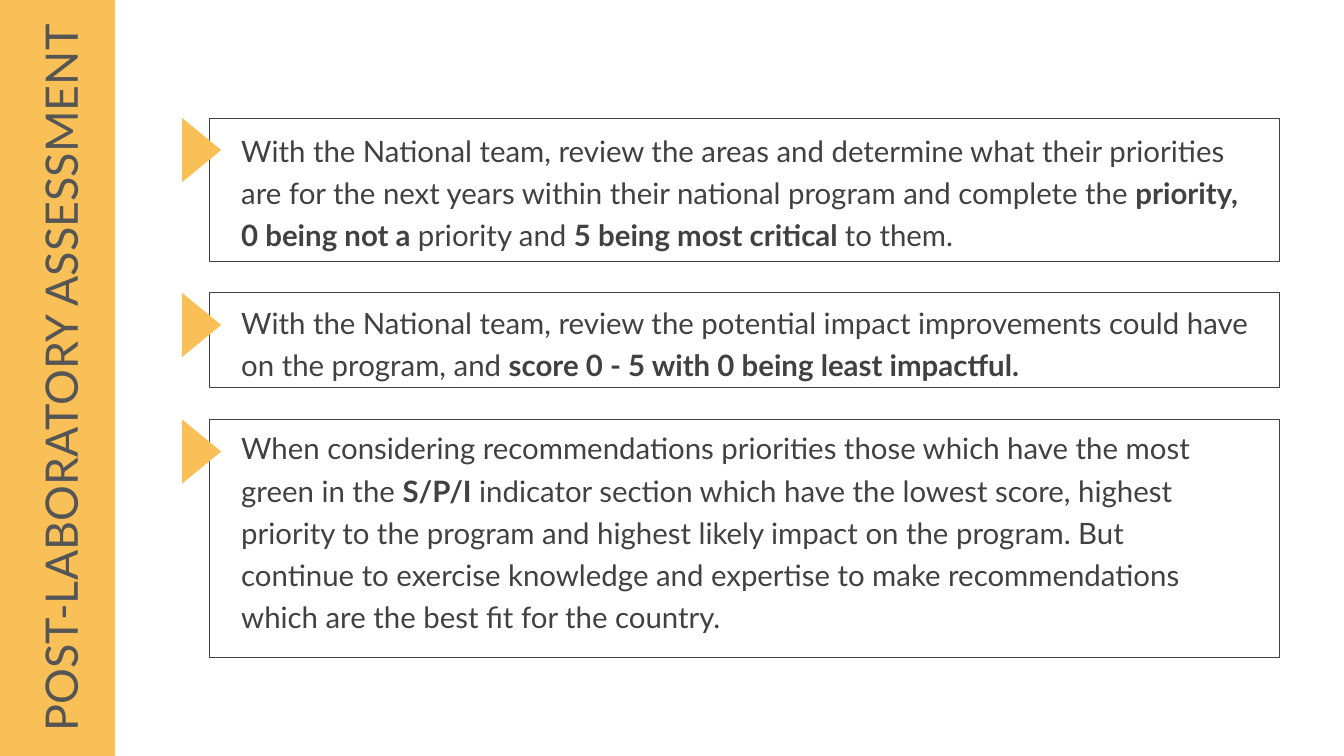
from dataclasses import dataclass

from pptx import Presentation
from pptx import util as u
from pptx.dml import color
from pptx.enum import shapes, text

Pt = u.Pt
RGB = color.RGBColor.from_string


@dataclass(frozen=True)
class Theme:
    font: str = "Lato"
    gold: str = "F8C056"
    ink: str = "414141"
    gray: str = "555555"
    head: float = 32
    body: float = 21


THEME = Theme()
WIDE, HIGH = 960, 540
BAND = 82
LEFT, TOP, WIDTH, GAP = 149.8, 84.2, 764, 22.7

# Each step: height, insets (left, top, right, bottom), anchor, runs (words, bold)
MID, UP = text.MSO_ANCHOR.MIDDLE, text.MSO_ANCHOR.TOP
STEPS = [
    (102.2, (22.5, 5.8, 22.5, 5.8), MID, [
        ("With the National team, review the areas and determine what their "
         "priorities are for the next years within their national program "
         "and complete the ", False),
        ("priority, 0 being not a ", True),
        ("priority and ", False),
        ("5 being most critical ", True),
        ("to them.", False)]),
    (67.7, (22.5, 2.9, 11.5, 2.9), MID, [
        ("With the National team, review the potential impact improvements "
         "could have on the program, and ", False),
        ("score 0 - 5 with 0 being least impactful.", True)]),
    (169.9, (22.5, 2.9, 28, 2.9), UP, [
        ("When considering recommendations priorities those which have the "
         "most green in the ", False),
        ("S/P/I", True),
        (" indicator section which have the lowest score, highest priority "
         "to the program and highest likely impact on the program. But "
         "continue to exercise knowledge and expertise to make "
         "recommendations which are the best fit for the country.", False)]),
]


def shape(slide, kind, x, y, w, h, fill=None, line=None):
    item = slide.shapes.add_shape(kind, Pt(x), Pt(y), Pt(w), Pt(h))
    item.shadow.inherit = False
    if fill:
        item.fill.solid()
        item.fill.fore_color.rgb = RGB(fill)
    else:
        item.fill.background()
    if line:
        item.line.color.rgb = RGB(line)
        item.line.width = Pt(0.5)
    else:
        item.line.fill.background()
    return item


def add_run(para, words, size, ink, bold=False):
    run = para.add_run()
    run.text = words
    font = run.font
    font.name, font.size, font.bold = THEME.font, Pt(size), bold
    font.color.rgb = RGB(ink)


def side_band(slide, x, y, w, h):
    shape(slide, shapes.MSO_SHAPE.RECTANGLE, x, y, w, h, fill=THEME.gold)
    # Title turned to read upward along the band
    deep = 54.7
    mid_x, mid_y = x + 51.8, y + h / 2
    box = slide.shapes.add_textbox(
        Pt(mid_x - h / 2), Pt(mid_y - deep / 2), Pt(h), Pt(deep))
    box.rotation = 270
    frame = box.text_frame
    frame.word_wrap = True
    para = frame.paragraphs[0]
    para.alignment = text.PP_ALIGN.CENTER
    para.line_spacing = 0.9
    add_run(para, "POST-LABORATORY ASSESSMENT", THEME.head, THEME.gray)


def step_box(slide, x, y, w, h, pads, anchor, runs):
    # Outlined text
    box = shape(slide, shapes.MSO_SHAPE.RECTANGLE, x, y, w, h, line=THEME.ink)
    frame = box.text_frame
    frame.word_wrap = True
    frame.vertical_anchor = anchor
    (frame.margin_left, frame.margin_top,
     frame.margin_right, frame.margin_bottom) = map(Pt, pads)
    para = frame.paragraphs[0]
    para.alignment = text.PP_ALIGN.LEFT
    para.line_spacing = 1.2
    para.space_after = Pt(6)
    for words, bold in runs:
        add_run(para, words, THEME.body, THEME.ink, bold)

    # Pointer over the left edge, level with the top of the box
    base, tall = 46, 28
    mark = shape(slide, shapes.MSO_SHAPE.ISOSCELES_TRIANGLE,
                 x - 5.8 - base / 2, y + (base - tall) / 2, base, tall,
                 fill=THEME.gold)
    mark.rotation = 90


def step_list(slide, x, y, w):
    for high, pads, anchor, runs in STEPS:
        step_box(slide, x, y, w, high, pads, anchor, runs)
        y += high + GAP


def main():
    deck = Presentation()
    deck.slide_width, deck.slide_height = Pt(WIDE), Pt(HIGH)
    slide = deck.slides.add_slide(deck.slide_layouts[6])
    side_band(slide, 0, 0, BAND, HIGH)
    step_list(slide, LEFT, TOP, WIDTH)
    deck.save("out.pptx")


if __name__ == "__main__":
    main()
